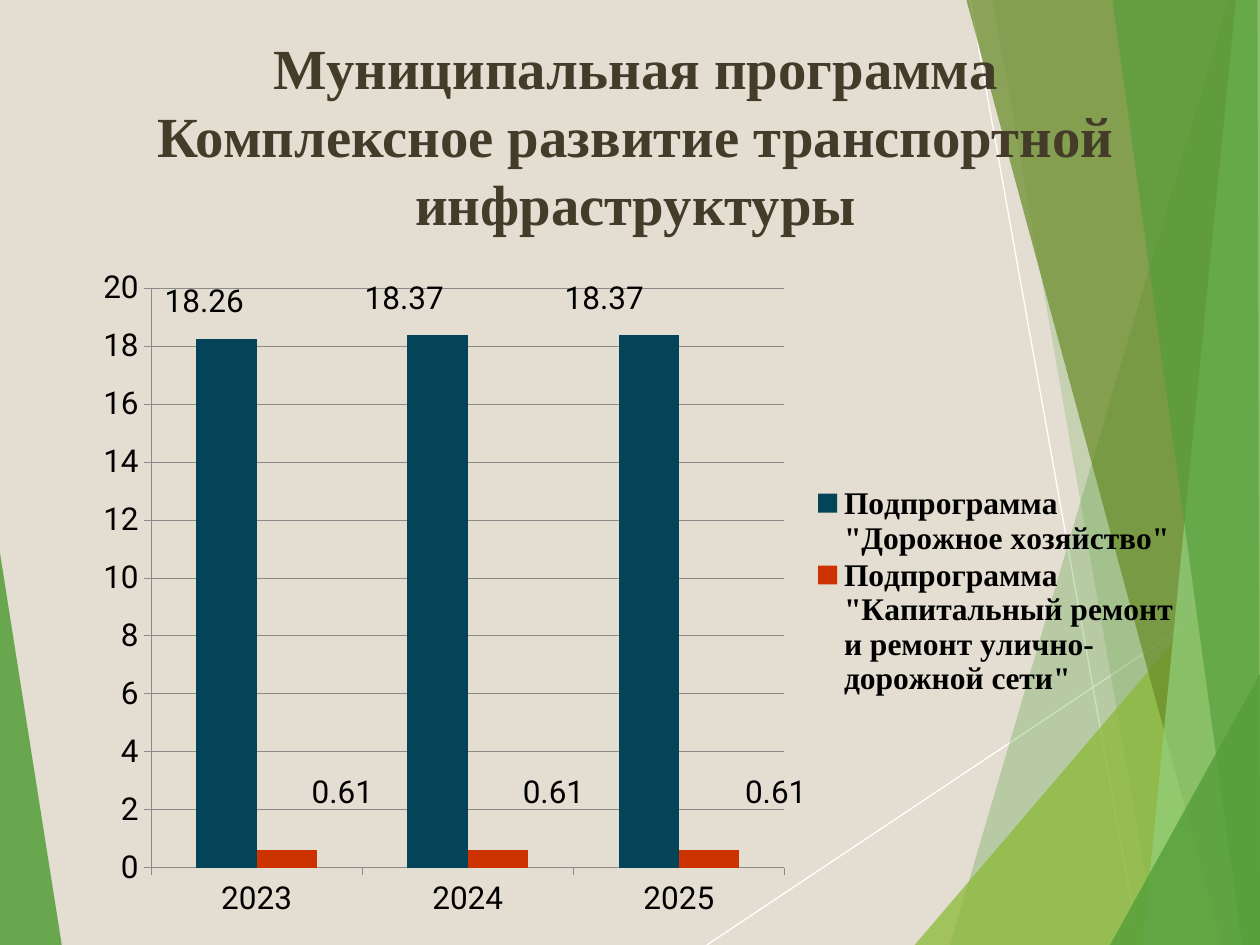
from lxml import etree
from pptx import Presentation
from pptx import util as u
from pptx.chart.data import CategoryChartData
from pptx.dml.color import RGBColor
from pptx.enum import chart as ch, shapes, text
from pptx.oxml import parse_xml
from pptx.oxml.ns import nsdecls, qn

COLORS = {
    "back": "E3DED1", "white": "FFFFFF", "black": "000000", "title": "443C29",
    "green": "549E39", "lime": "8AB833", "olive": "678A26", "mint": "93D07D",
    "road": "044458", "repair": "CC3300", "grid": "8B8B8B",
}
SERIF = "Times New Roman"
SANS = "Roboto"
WIDE, HIGH = 10, 7.5

RAYS = [((5.61, 7.5), (10, 4.57)), ((7.7, 0), (9.04, 7.5))]
PANES = [
    ("green", 85, [(0, 4.39), (0.49, 7.5), (0, 7.5)]),
    ("green", 30, [(9.75, 0), (7.54, 7.5), (10, 7.5), (10, 0)]),
    ("green", 20, [(7.88, 0), (9.19, 7.5), (10, 7.5), (10, 0)]),
    ("lime", 72, [(7.26, 7.5), (10, 4.29), (10, 7.5)]),
    ("olive", 70, [(7.67, 0), (9.7, 7.5), (10, 7.5), (10, 0)]),
    ("mint", 70, [(9.81, 0), (9.07, 7.5), (10, 7.5), (10, 0)]),
    ("green", 65, [(8.83, 0), (9.86, 7.5), (10, 7.5), (9.98, 0)]),
    ("green", 80, [(8.81, 7.5), (10, 5.35), (10, 7.5)]),
]
YEARS = ["2023", "2024", "2025"]
SERIES = [
    ('Подпрограмма "Дорожное хозяйство"', "road", [18.26, 18.37, 18.37],
     [(-0.02, -0.02), (-0.03, -0.02), (-0.04, -0.02)]),
    ('Подпрограмма "Капитальный ремонт и ремонт улично-дорожной сети"',
     "repair", [0.61, 0.61, 0.61],
     [(0.05, -0.05), (0.05, -0.05), (0.06, -0.05)]),
]
NO_LEADERS = (
    f'<c:extLst {nsdecls("c")}>'
    '<c:ext uri="{CE6537A1-D6FC-4f65-9D91-7224C49458BB}" '
    'xmlns:c15="http://schemas.microsoft.com/office/drawing/2012/chart">'
    '<c15:showLeaderLines val="0"/></c:ext></c:extLst>')


def color(name):
    return RGBColor.from_string(COLORS[name])


def paint(fill, name):
    fill.solid()
    fill.fore_color.rgb = color(name)


def style(font, size, face, name, bold=False):
    font.size = u.Pt(size)
    font.name = face
    font.color.rgb = color(name)
    font.bold = bold


def rule(line, name, width):
    line.color.rgb = color(name)
    line.width = u.Pt(width)


def add_ray(slide, start, end):
    ray = slide.shapes.add_connector(
        shapes.MSO_CONNECTOR.STRAIGHT, *(u.Inches(n) for n in start + end))
    rule(ray.line, "white", 0.75)
    etree.SubElement(ray._element.spPr, qn("a:effectLst"))


def add_pane(slide, name, alpha, points):
    spots = [(u.Inches(x), u.Inches(y)) for x, y in points]
    pen = slide.shapes.build_freeform(*spots[0])
    pen.add_line_segments(spots[1:], close=True)
    pane = pen.convert_to_shape()
    pane.shadow.inherit = False
    paint(pane.fill, name)
    pane.line.fill.background()
    tint = pane._element.spPr.find(".//" + qn("a:srgbClr"))
    etree.SubElement(tint, qn("a:alpha"), val=str(alpha * 1000))


def add_backdrop(slide, left, top):
    def shift(point):
        return left + point[0], top + point[1]

    for start, end in RAYS:
        add_ray(slide, shift(start), shift(end))
    for name, alpha, points in PANES:
        add_pane(slide, name, alpha, [shift(p) for p in points])


def add_title(slide, left, top, width, height):
    title = slide.shapes.title
    slide.shapes._spTree.append(title._element)
    title.left, title.top = u.Inches(left), u.Inches(top)
    title.width, title.height = u.Inches(width), u.Inches(height)
    frame = title.text_frame
    frame.word_wrap = True
    frame.auto_size = text.MSO_AUTO_SIZE.NONE
    frame.vertical_anchor = text.MSO_ANCHOR.TOP
    para = frame.paragraphs[0]
    para.text = ("Муниципальная программа\v"
                 "Комплексное развитие транспортной инфраструктуры")
    para.alignment = text.PP_ALIGN.CENTER
    para.line_spacing = 1.0
    for run in para.runs:
        style(run.font, 32.4, SERIF, "title", True)


def make_layout(x, y, w=None, h=None, inner=False):
    tags = []
    if inner:
        tags.append('<c:layoutTarget val="inner"/>')
    if w is not None:
        tags.append('<c:xMode val="edge"/><c:yMode val="edge"/>')
    for tag, size in zip("xywh", (x, y, w, h)):
        if size is not None:
            tags.append(f'<c:{tag} val="{size}"/>')
    return parse_xml(f'<c:layout {nsdecls("c")}><c:manualLayout>'
                     f'{"".join(tags)}</c:manualLayout></c:layout>')


def set_layout(parent, layout, index):
    old = parent.find(qn("c:layout"))
    if old is not None:
        parent.remove(old)
    parent.insert(index, layout)


def style_axis(axis):
    rule(axis.format.line, "grid", 0.5)
    axis.major_tick_mark = ch.XL_TICK_MARK.OUTSIDE
    axis.minor_tick_mark = ch.XL_TICK_MARK.NONE
    style(axis.tick_labels.font, 18, SANS, "black")


def style_series(series, name, shifts):
    paint(series.format.fill, name)
    series.invert_if_negative = False
    labels = series.data_labels
    labels.show_value = True
    labels.position = ch.XL_LABEL_POSITION.OUTSIDE_END
    style(labels.font, 18, SANS, "black")
    for index in range(len(shifts)):
        label = series.points[index].data_label
        style(label.font, 18, SANS, "black")
        label.position = ch.XL_LABEL_POSITION.OUTSIDE_END
    group = labels._element
    for item, shift in zip(group.findall(qn("c:dLbl")), shifts):
        set_layout(item, make_layout(*shift), 1)
    for leader in group.findall(qn("c:showLeaderLines")):
        leader.set("val", "0")
    group.append(parse_xml(NO_LEADERS))


def add_graph(slide, left, top, width, height):
    data = CategoryChartData()
    data.categories = YEARS
    for label, _, values, _ in SERIES:
        data.add_series(label, values)
    graph = slide.shapes.add_chart(
        ch.XL_CHART_TYPE.COLUMN_CLUSTERED, u.Inches(left), u.Inches(top),
        u.Inches(width), u.Inches(height), data).chart
    graph.has_title = False
    style(graph.font, 18, SANS, "black")
    plot = graph.plots[0]
    plot.vary_by_categories = False
    plot.gap_width, plot.overlap = 150, 0
    for series, (_, name, _, shifts) in zip(plot.series, SERIES):
        style_series(series, name, shifts)
    scale = graph.value_axis
    scale.minimum_scale, scale.maximum_scale, scale.major_unit = 0, 20, 2
    scale.has_major_gridlines = True
    rule(scale.major_gridlines.format.line, "grid", 0.5)
    for axis in (scale, graph.category_axis):
        style_axis(axis)
    graph.has_legend = True
    legend = graph.legend
    legend.position = ch.XL_LEGEND_POSITION.RIGHT
    legend.include_in_layout = False
    style(legend.font, 18, SERIF, "black", True)
    set_layout(legend._element, make_layout(0.65, 0.34, 0.34, 0.32), 1)
    area = graph._chartSpace.chart.plotArea
    set_layout(area, make_layout(0.06, 0.05, 0.57, 0.86, True), 0)


def main():
    deck = Presentation()
    deck.slide_width, deck.slide_height = u.Inches(WIDE), u.Inches(HIGH)
    slide = deck.slides.add_slide(deck.slide_layouts[5])
    paint(slide.background.fill, "back")
    add_backdrop(slide, 0, 0)
    add_title(slide, 0.28, 0.21, 9.53, 1.65)
    add_graph(slide, 0.67, 2.02, 8.82, 5.35)
    deck.save("out.pptx")


if __name__ == "__main__":
    main()
